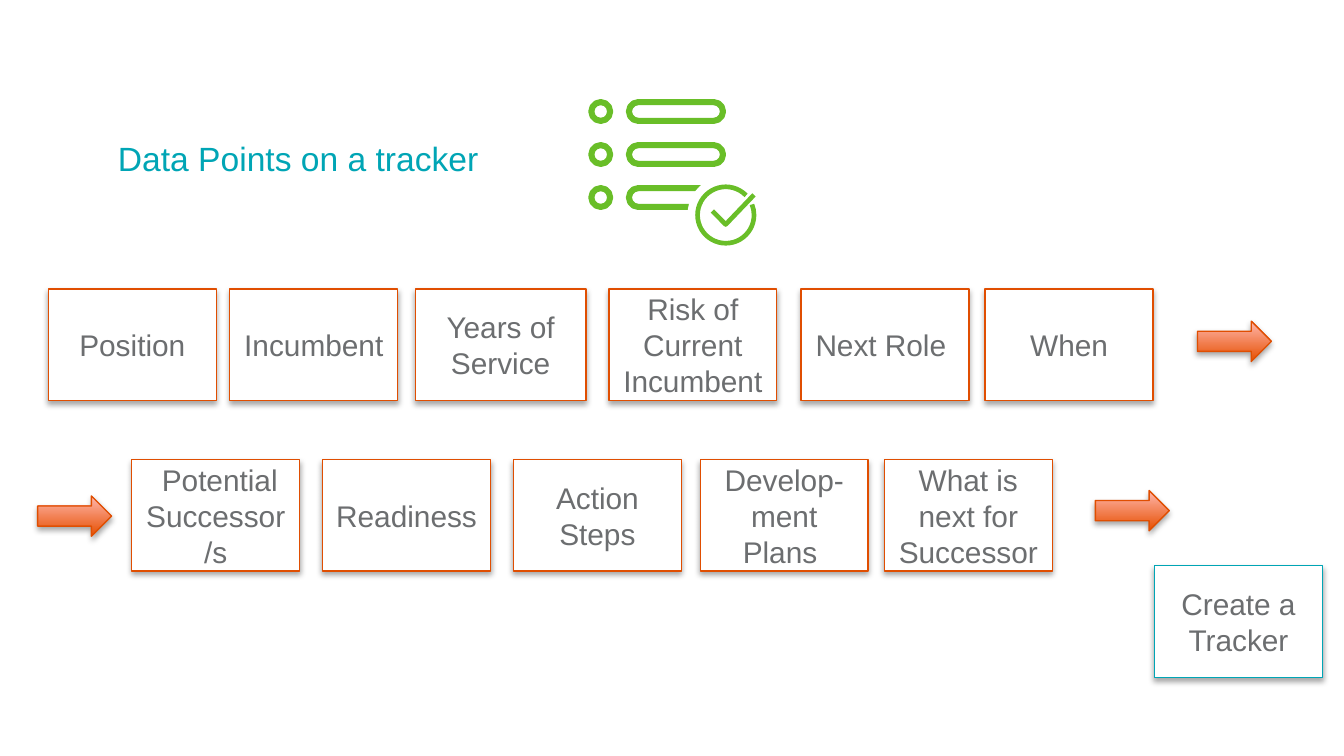
import pptx
import pptx.dml.color
import pptx.enum.shapes
import pptx.enum.text
import pptx.oxml
import pptx.util

Inches = pptx.util.Inches
MSO = pptx.enum.shapes.MSO_SHAPE
GREEN, ORANGE, TEAL, GREY, WHITE = "69BE28", "E04E01", "00A5B5", "6C6E70", "FFFFFF"
BOX_W, BOX_H = 1.25, 0.83
SHADOW = (
    '<a:effectLst xmlns:a="http://schemas.openxmlformats.org/drawingml/2006/main">'
    '<a:outerShdw blurRad="40000" dist="23000" dir="5400000" rotWithShape="0">'
    '<a:srgbClr val="000000"><a:alpha val="35000"/></a:srgbClr>'
    '</a:outerShdw></a:effectLst>'
)


def rgb(value):
    """Turn a hex string into a colour."""
    return pptx.dml.color.RGBColor.from_string(value)


def style(sp, line, width, fill=None):
    """Set the outline and the fill, and turn the shadow off."""
    sp.shadow.inherit = False
    sp.line.color.rgb = rgb(line)
    sp.line.width = pptx.util.Pt(width)
    if fill:
        sp.fill.solid()
        sp.fill.fore_color.rgb = rgb(fill)
    else:
        sp.fill.background()


def add_shape(s, kind, x, y, w, h, line, width, fill=None):
    """Add a styled preset shape."""
    sp = s.shapes.add_shape(kind, Inches(x), Inches(y), Inches(w), Inches(h))
    style(sp, line, width, fill)
    return sp


def drop_shadow(sp):
    """Give a shape a soft shadow below it."""
    props = sp._element.spPr
    props.remove(props.find(pptx.oxml.ns.qn("a:effectLst")))
    props.append(pptx.oxml.parse_xml(SHADOW))


def write(sp, text, size, color):
    """Write one line of styled text into a shape."""
    tf = sp.text_frame
    tf.word_wrap = True
    p = tf.paragraphs[0]
    r = p.add_run()
    r.text = text
    for name, value in {"name": "Arial", "size": pptx.util.Pt(size)}.items():
        setattr(r.font, name, value)
    r.font.color.rgb = rgb(color)
    return tf


def add_title(s, x, y, w, h):
    """Add the slide title."""
    sp = s.shapes.add_textbox(Inches(x), Inches(y), Inches(w), Inches(h))
    write(sp, "Data Points on a tracker", 18, TEAL)


def add_checklist(s, x, y):
    """Draw three list rows with a tick badge."""
    for i in range(3):
        top = y + 0.03 + i * 0.32
        add_shape(s, MSO.OVAL, x + 0.02, top, 0.14, 0.14, GREEN, 3.25)
        bar = add_shape(s, MSO.ROUNDED_RECTANGLE, x + 0.3, top, 0.7, 0.14, GREEN, 3.25)
        bar.adjustments[0] = 0.5
    add_shape(s, MSO.OVAL, x + 0.75, y + 0.59, 0.56, 0.55, WHITE, 2, WHITE)
    ring = add_shape(s, MSO.ARC, x + 0.81, y + 0.66, 0.42, 0.42, GREEN, 2.5)
    for i, degrees in enumerate((338, 316)):
        ring.adjustments[i] = degrees * 0.6
    points = [(x + 0.92, y + 0.84), (x + 1.02, y + 0.94), (x + 1.23, y + 0.72)]
    points = [(Inches(px), Inches(py)) for px, py in points]
    pen = s.shapes.build_freeform(*points[0])
    pen.add_line_segments(points[1:], close=False)
    style(pen.convert_to_shape(), GREEN, 2.5)


def add_box(s, x, y, text, w=BOX_W, line=ORANGE):
    """Add one data point box."""
    sp = add_shape(s, MSO.RECTANGLE, x, y, w, BOX_H, line, 0.75, WHITE)
    drop_shadow(sp)
    tf = write(sp, text, 16, GREY)
    tf.vertical_anchor = pptx.enum.text.MSO_ANCHOR.MIDDLE
    tf.paragraphs[0].alignment = pptx.enum.text.PP_ALIGN.CENTER


def add_arrow(s, x, y):
    """Add one shaded arrow."""
    sp = add_shape(s, MSO.RIGHT_ARROW, x, y, 0.55, 0.3, ORANGE, 0.75)
    sp.fill.gradient()
    sp.fill.gradient_angle = 90
    for stop, color in zip(sp.fill.gradient_stops, ("E64F00", "FFB7AE")):
        stop.color.rgb = rgb(color)
    drop_shadow(sp)


def add_row(s, x, y, boxes, arrows):
    """Add a row of boxes and its arrows, offset from the row's corner."""
    for dx, text, *width in boxes:
        add_box(s, x + dx, y, text, *width)
    for dx, dy in arrows:
        add_arrow(s, x + dx, y + dy)


def main():
    """Build the slide."""
    prs = pptx.Presentation()
    prs.slide_width = Inches(10)
    prs.slide_height = prs.slide_width * 9 // 16
    s = prs.slides.add_slide(prs.slide_layouts[6])
    add_checklist(s, 4.38, 0.73)
    add_row(s, 0.36, 2.15, [
        (0, "Position"),
        (1.35, "Incumbent"),
        (2.73, "Years of Service", 1.27),
        (4.17, "Risk of Current Incumbent "),
        (5.6, "Next Role "),
        (6.97, "When"),
    ], [(8.55, 0.24)])
    add_row(s, 0.28, 3.42, [
        (0.7, " Potential Successor/s"),
        (2.12, "Readiness"),
        (3.54, "Action Steps"),
        (4.93, "Develop-ment Plans "),
        (6.3, "What is next for Successor"),
    ], [(0, 0.27), (7.87, 0.23)])
    add_box(s, 8.59, 4.21, "Create a Tracker", line=TEAL)
    add_title(s, 0.78, 0.98, 5, 0.4)
    prs.save("out.pptx")


if __name__ == "__main__":
    main()
